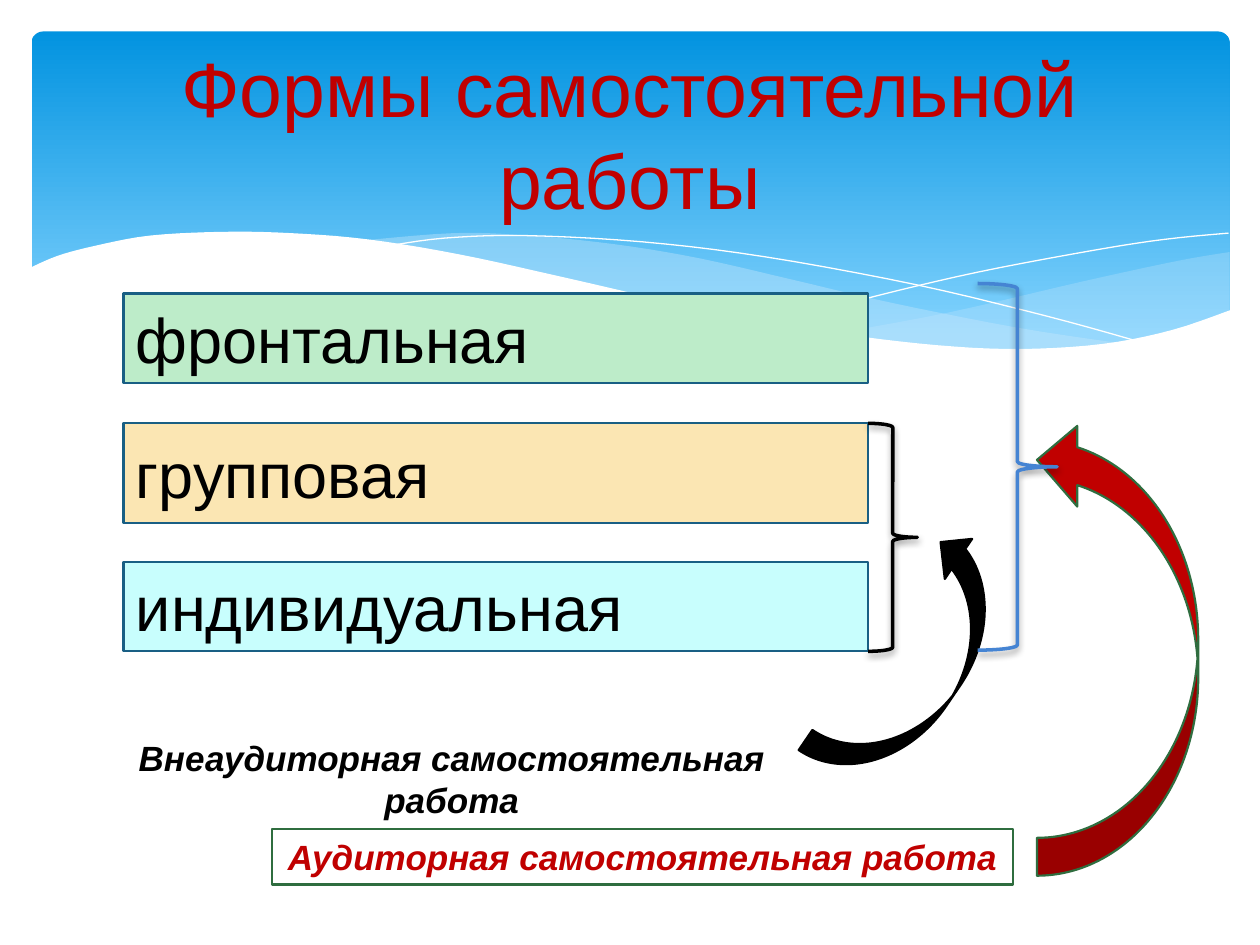
from lxml import etree
from pptx import Presentation
from pptx.dml.color import RGBColor
from pptx.enum.shapes import MSO_SHAPE
from pptx.enum.text import MSO_ANCHOR, MSO_AUTO_SIZE, PP_ALIGN
from pptx.oxml.ns import qn
from pptx.util import Inches, Pt

RECTANGLE, ROUNDED = MSO_SHAPE.RECTANGLE, MSO_SHAPE.ROUNDED_RECTANGLE
BRACE, CURVED_ARROW = MSO_SHAPE.RIGHT_BRACE, MSO_SHAPE.CURVED_UP_ARROW
LEFT, CENTER = PP_ALIGN.LEFT, PP_ALIGN.CENTER
TOP, MIDDLE = MSO_ANCHOR.TOP, MSO_ANCHOR.MIDDLE
FIT_SHAPE = MSO_AUTO_SIZE.SHAPE_TO_FIT_TEXT

COLORS = {
    "sky_top": "0293E0", "sky_bottom": "83D3FE", "wave": "C6E7FC", "white": "FFFFFF",
    "red": "C00000", "black": "000000", "navy": "195F84", "forest": "2F6D3F",
    "blue": "4584D3", "mint": "BDECC9", "sand": "FBE6B3", "aqua": "C8FEFD",
}
TITLE = "Формы самостоятельной работы"
FORMS = [
    ("фронтальная", 2.33, 0.71, "mint"),
    ("групповая", 3.36, 0.79, "sand"),
    ("индивидуальная", 4.46, 0.71, "aqua"),
]
OUTSIDE_CLASS = "Внеаудиторная самостоятельная работа"
IN_CLASS = "Аудиторная самостоятельная работа"
BRACES = [
    ((6.89, 3.36, 0.39, 1.81), "black", 0.083),
    ((7.76, 2.25, 0.63, 2.91), "blue", 0.065),
]
BLACK_ARROW = ((6.18, 4.88, 2.19, 0.77), 304.3, "black", "black", (0.25, 0.5, 0.25))
RED_ARROW = ((7.06, 4.5, 3.62, 1.28), 270, "red", "forest", (0.235, 0.5, 0.25))

RIGHT_WAVE = [
    [(9.76, 2), (9.35, 2.07), (8.61, 2.23), (7.53, 2.48), (6.61, 2.65)],
    [(6.61, 2.65), (7.19, 2.72), (7.81, 2.77), (8.35, 2.77), (8.97, 2.7),
     (9.42, 2.59), (9.76, 2.47)],
]
LONG_WAVE = [
    [(8.93, 2.73), (8.07, 2.6), (7.06, 2.4), (6.29, 2.22), (5.55, 2.05), (4.89, 1.94),
     (4.2, 1.87), (3.61, 1.85), (2.86, 1.91)],
    [(2.86, 1.91), (3.62, 2.03), (4.49, 2.22), (5.66, 2.48), (6.5, 2.64), (7.22, 2.74),
     (7.85, 2.78), (8.38, 2.78), (8.93, 2.73)],
]
FALLING_LINE = [[(3.09, 1.95), (3.53, 1.89), (4.16, 1.87), (5.1, 1.92), (6.08, 2.04),
                 (7.27, 2.26), (8.31, 2.51), (9.07, 2.72)]]
RISING_LINE = [[(6.13, 2.57), (6.95, 2.35), (7.76, 2.16), (8.66, 1.99), (9.24, 1.9),
                (9.75, 1.85)]]
WHITE_WAVE = [
    [(9.77, 2.46), (9.3, 2.62), (8.75, 2.73), (8.09, 2.77), (7.44, 2.74), (6.68, 2.65),
     (5.79, 2.5), (4.47, 2.2), (3.65, 2.02), (2.92, 1.9), (2.3, 1.85), (1.77, 1.84),
     (1.19, 1.87), (0.76, 1.95), (0.46, 2.03), (0.23, 2.13)],
    [(0.23, 3.29), (9.77, 3.29)],
]
WAVES = [
    (RIGHT_WAVE, "wave", 29), (LONG_WAVE, "wave", 40),
    (FALLING_LINE, None, 100), (RISING_LINE, None, 100), (WHITE_WAVE, "white", 100),
]


def rgb(name):
    return RGBColor.from_string(COLORS[name])


def paint(shape, fill=None, line=None, width=1.25, alpha=100):
    shape.shadow.inherit = False
    if fill:
        shape.fill.solid()
        shape.fill.fore_color.rgb = rgb(fill)
        if alpha < 100:
            color = next(shape._element.spPr.iter(qn("a:srgbClr")))
            etree.SubElement(color, qn("a:alpha"), val=str(alpha * 1000))
    else:
        shape.fill.background()
    if line:
        shape.line.color.rgb = rgb(line)
        shape.line.width = Pt(width)
    else:
        shape.line.fill.background()


def add_shape(slide, kind, box, adjustments=(), **style):
    shape = slide.shapes.add_shape(kind, *map(Inches, box))
    for index, value in enumerate(adjustments):
        shape.adjustments[index] = value
    paint(shape, **style)
    return shape


def write(shape, text, size=36, color="black", align=LEFT, anchor=MIDDLE,
          emphasis=False, wrap=True, fit=MSO_AUTO_SIZE.NONE):
    frame = shape.text_frame
    frame.word_wrap, frame.auto_size, frame.vertical_anchor = wrap, fit, anchor
    paragraph = frame.paragraphs[0]
    paragraph.alignment = align
    run = paragraph.add_run()
    run.text = text
    run.font.name, run.font.size = "Arial", Pt(size)
    run.font.bold = run.font.italic = emphasis
    run.font.color.rgb = rgb(color)


def smooth_curve(points, steps=5):
    """Return points along a Catmull-Rom curve through the given points."""
    if len(points) < 3:
        return points
    padded = [points[0], *points, points[-1]]
    curve = [points[0]]
    for before, start, end, after in zip(padded, padded[1:], padded[2:], padded[3:]):
        for step in range(1, steps + 1):
            t = step / steps
            curve.append(tuple(
                (2 * b + (c - a) * t + (2 * a - 5 * b + 4 * c - d) * t ** 2
                 + (3 * b - a - 3 * c + d) * t ** 3) / 2
                for a, b, c, d in zip(before, start, end, after)))
    return curve


def add_wave(slide, edges, fill, alpha):
    points = [(Inches(x), Inches(y)) for edge in edges for x, y in smooth_curve(edge)]
    builder = slide.shapes.build_freeform(*points[0])
    builder.add_line_segments(points[1:], close=bool(fill))
    paint(builder.convert_to_shape(), fill, None if fill else "white", 0, alpha)


def add_shadow(shape):
    effects = shape._element.spPr.find(qn("a:effectLst"))
    shadow = etree.SubElement(
        effects, qn("a:outerShdw"), blurRad=str(Pt(4)), dist=str(Pt(2)),
        dir="5400000", rotWithShape="0")
    color = etree.SubElement(shadow, qn("a:srgbClr"), val=COLORS["black"])
    etree.SubElement(color, qn("a:alpha"), val="38000")


def add_background(slide):
    sky = add_shape(slide, ROUNDED, (0.25, 0.25, 9.51, 2.7), [0.034])
    sky.fill.gradient()
    sky.fill.gradient_angle = 270
    stops = zip(sky.fill.gradient_stops, ("sky_top", "sky_bottom"), (0, 0.9))
    for stop, color, position in stops:
        stop.color.rgb = rgb(color)
        stop.position = position
    for edges, fill, alpha in WAVES:
        add_wave(slide, edges, fill, alpha)


def add_title(slide):
    title = slide.shapes.title
    title.left, title.top, title.width, title.height = map(Inches, (0.5, 0.37, 9, 1.37))
    write(title, TITLE, size=44, color="red", align=CENTER)
    slide.shapes._spTree.append(title._element)


def main():
    presentation = Presentation()
    presentation.slide_width, presentation.slide_height = Inches(10), Inches(7.5)
    slide = presentation.slides.add_slide(presentation.slide_layouts[5])
    add_background(slide)
    add_title(slide)
    for text, top, height, fill in FORMS:
        bar = add_shape(slide, RECTANGLE, (0.98, top, 5.91, height), fill=fill, line="navy")
        write(bar, text)
    label = {"size": 20, "align": CENTER, "anchor": TOP, "emphasis": True, "fit": FIT_SHAPE}
    outside = slide.shapes.add_textbox(*map(Inches, (0.91, 5.8, 5.35, 0.77)))
    write(outside, OUTSIDE_CLASS, **label)
    inside = add_shape(slide, RECTANGLE, (2.16, 6.58, 5.88, 0.44), fill="white", line="forest")
    write(inside, IN_CLASS, color="red", wrap=False, **label)
    braces = []
    for box, line, bend in BRACES:
        braces.append(add_shape(slide, BRACE, box, [bend, 0.5], line=line, width=2))
        add_shadow(braces[-1])
    for box, rotation, fill, line, adjustments in (BLACK_ARROW, RED_ARROW):
        arrow = add_shape(slide, CURVED_ARROW, box, adjustments, fill=fill, line=line)
        arrow.rotation = rotation
    slide.shapes._spTree.append(braces[-1]._element)
    presentation.save("out.pptx")


if __name__ == "__main__":
    main()
